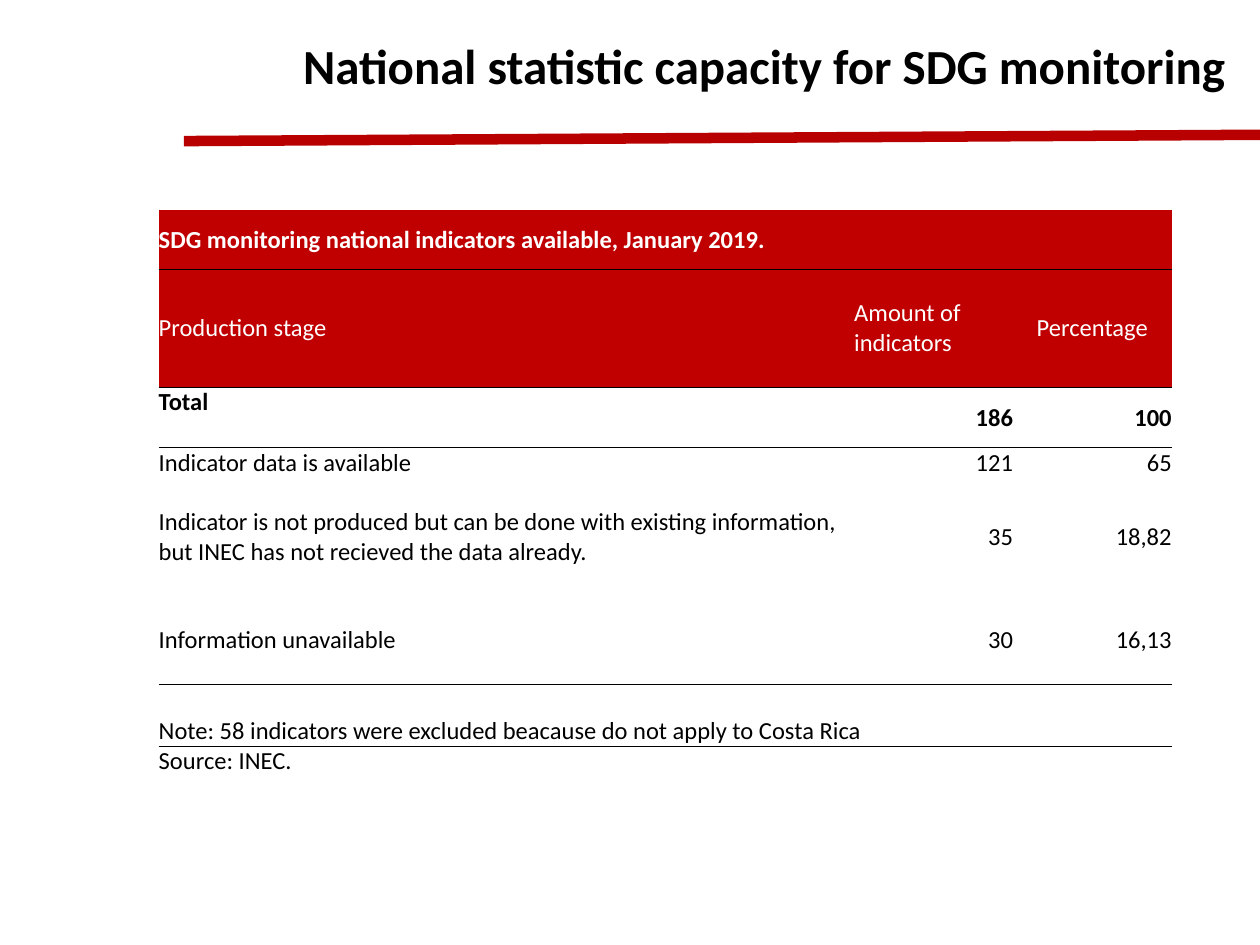
from lxml.etree import SubElement
from pptx import Presentation
from pptx.dml.color import RGBColor
from pptx.enum.shapes import MSO_CONNECTOR
from pptx.enum.text import MSO_ANCHOR, PP_ALIGN
from pptx.oxml.ns import qn
from pptx.util import Inches, Pt

COLORS = {"rule": "B80000", "header": "C00000", "text": "000000", "white": "FFFFFF"}
FONT = "Calibri"
NO_STYLE = "{2D5ABB26-0587-4C30-8999-92F81FD0307C}"

COL_WIDTHS = [5.52, 1.26, 1.26]
ROW_HEIGHTS = [0.23, 0.47, 0.94, 0.47, 0.24, 0.94, 0.7, 0.49, 0.24]
ROWS = [
    [""],
    ["SDG monitoring national indicators available, January 2019."],
    ["Production stage", "Amount of indicators", "Percentage"],
    ["Total", "186", "100"],
    ["Indicator data is available", "121", "65"],
    ["Indicator is not produced but can be done with existing information, "
     "but INEC has not recieved the data already.", "35", "18,82"],
    ["Information unavailable", "30", "16,13"],
    ["Note: 58 indicators were excluded beacause do not apply to Costa Rica"],
    ["Source: INEC.", "", ""],
]
CAPTION, HEADINGS, TOTAL, LAST_DATA, NOTE = 1, 2, 3, 6, 7
RULED_ROWS = [CAPTION, HEADINGS, LAST_DATA]  # rows with a line below


def rgb(name):
    return RGBColor.from_string(COLORS[name])


def add_text(p, text, size, color="text", bold=False):
    r = p.add_run()
    r.text = text
    r.font.name = FONT
    r.font.size = Pt(size)
    r.font.bold = bold
    r.font.color.rgb = rgb(color)


def set_border(cell, side):
    """Draw a thin line on one side; borders precede the cell fill."""
    tcPr = cell._tc.get_or_add_tcPr()
    ln = SubElement(tcPr, qn(f"a:{side}"), w=str(Pt(0.5)))
    fill = SubElement(ln, qn("a:solidFill"))
    SubElement(fill, qn("a:srgbClr"), val=COLORS["text"])


def add_title(s, left, top, width, height):
    sp = s.shapes.title
    sp.left, sp.top, sp.width, sp.height = map(Inches, (left, top, width, height))
    tf = sp.text_frame
    tf.word_wrap = True
    tf.vertical_anchor = MSO_ANCHOR.MIDDLE
    p = tf.paragraphs[0]
    p.alignment = PP_ALIGN.RIGHT
    add_text(p, "National statistic capacity for SDG monitoring", 28, bold=True)


def add_rule(s, x1, y1, x2, y2):
    line = s.shapes.add_connector(MSO_CONNECTOR.STRAIGHT, *map(Inches, (x1, y1, x2, y2)))
    line.line.color.rgb = rgb("rule")
    line.line.width = Pt(6)
    SubElement(line._element.spPr, qn("a:effectLst"))


def fill_cell(cell, row, col, text):
    header = row in (CAPTION, HEADINGS)
    cell.margin_left = cell.margin_right = cell.margin_top = cell.margin_bottom = 0
    cell.vertical_anchor = MSO_ANCHOR.BOTTOM if row >= NOTE else MSO_ANCHOR.MIDDLE
    if (row, col) == (TOTAL, 0):
        cell.margin_bottom = Inches(0.24)  # label sits above its figures

    # Lines, then fill
    if row - 1 in RULED_ROWS:
        set_border(cell, "lnT")
    if row in RULED_ROWS:
        set_border(cell, "lnB")
    if header:
        cell.fill.solid()
        cell.fill.fore_color.rgb = rgb("header")
    else:
        cell.fill.background()

    # Text
    p = cell.text_frame.paragraphs[0]
    if not text:
        SubElement(p._p, qn("a:endParaRPr"), sz="1400")
        return
    if col and row > HEADINGS:
        p.alignment = PP_ALIGN.RIGHT
    elif col == 2:
        p.alignment = PP_ALIGN.CENTER
    add_text(p, text, 14, "white" if header else "text", row in (CAPTION, TOTAL))


def add_indicator_table(s, left, top):
    size = sum(COL_WIDTHS), sum(ROW_HEIGHTS)
    frame = s.shapes.add_table(len(ROWS), len(COL_WIDTHS),
                               *map(Inches, (left, top, *size)))
    table = frame.table
    table.first_row = table.horz_banding = False
    table._tbl.tblPr.find(qn("a:tableStyleId")).text = NO_STYLE
    for column, width in zip(table.columns, COL_WIDTHS):
        column.width = Inches(width)
    for i, (height, texts) in enumerate(zip(ROW_HEIGHTS, ROWS)):
        table.rows[i].height = Inches(height)
        if len(texts) == 1:
            table.cell(i, 0).merge(table.cell(i, 2))
        for j in range(len(COL_WIDTHS)):
            fill_cell(table.cell(i, j), i, j, texts[j] if j < len(texts) else "")


def main():
    prs = Presentation()
    prs.slide_width, prs.slide_height = Inches(10), Inches(7.5)
    s = prs.slides.add_slide(prs.slide_layouts[5])
    add_rule(s, 1.46, 1.12, 10, 1.07)
    add_indicator_table(s, 1.26, 1.43)
    add_title(s, 0.84, 0.23, 8.98, 0.57)
    prs.save("out.pptx")


if __name__ == "__main__":
    main()
